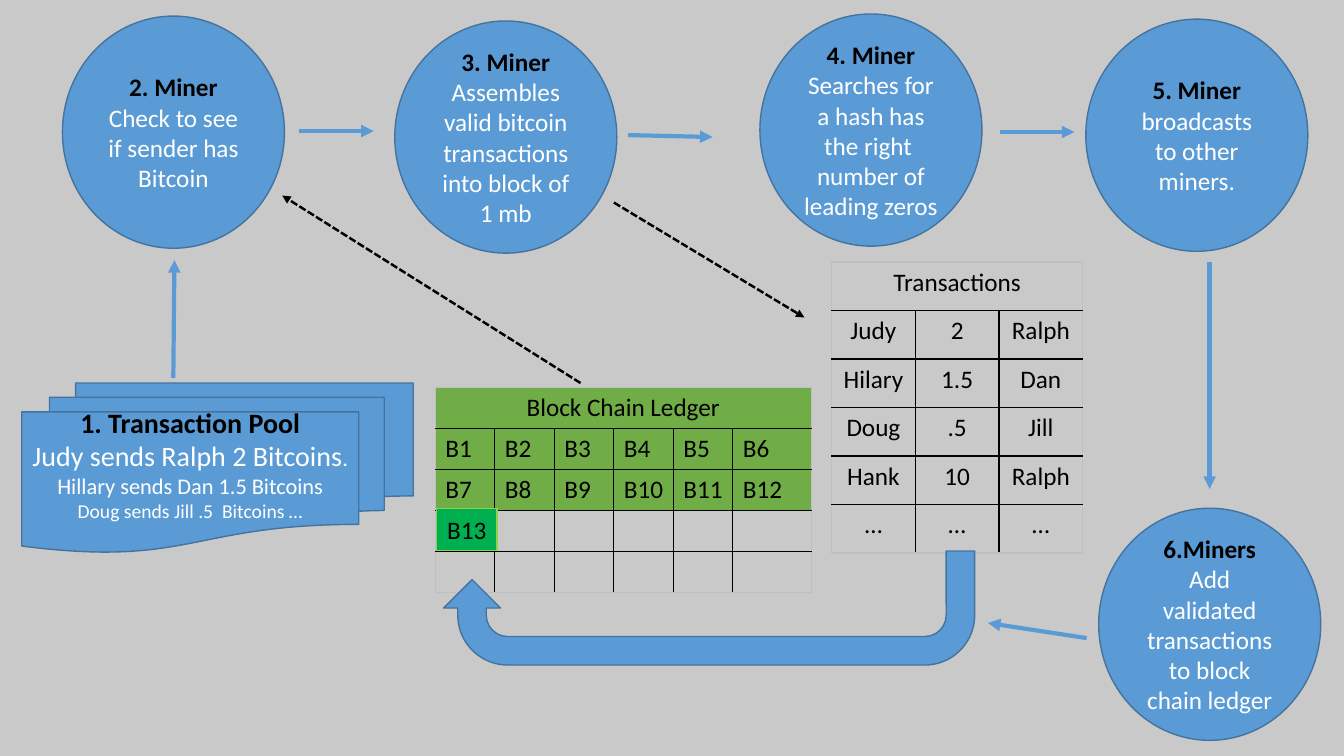
from lxml import etree
from pptx import Presentation
from pptx.dml.color import RGBColor
from pptx.enum import dml, shapes, text
from pptx.oxml import ns
from pptx.util import Pt

COLORS = {
    "background": "C9C9C9", "blue": "5B9BD5", "outline": "43739E",
    "ledger": "70AD47", "new_block": "00B050", "new_block_edge": "92D050",
    "black": "000000", "white": "FFFFFF", "table_edge": "BFBFBF",
}
FONT = "Calibri"


def add_run(paragraph, words, size=18, color="black", bold=False):
    run = paragraph.add_run()
    run.text = words
    run.font.name = FONT
    run.font.size = Pt(size)
    run.font.bold = bold
    run.font.color.rgb = RGBColor.from_string(COLORS[color])


def add_block(kind, left, top, width, height, fill="blue", edge="outline", lines=()):
    """Add a filled shape; each line is a list of runs (words, size, color, bold)."""
    shape = slide.shapes.add_shape(kind, Pt(left), Pt(top), Pt(width), Pt(height))
    shape.shadow.inherit = False
    shape.fill.solid()
    shape.fill.fore_color.rgb = RGBColor.from_string(COLORS[fill])
    shape.line.color.rgb = RGBColor.from_string(COLORS[edge])
    shape.line.width = Pt(1)
    frame = shape.text_frame
    frame.word_wrap = True
    frame.vertical_anchor = text.MSO_ANCHOR.MIDDLE
    for index, runs in enumerate(lines):
        paragraph = frame.add_paragraph() if index else frame.paragraphs[0]
        paragraph.alignment = text.PP_ALIGN.CENTER
        for run in runs:
            add_run(paragraph, *run)
    return shape


presentation = Presentation()
presentation.slide_width, presentation.slide_height = Pt(960), Pt(540)
slide = presentation.slides.add_slide(presentation.slide_layouts[6])
slide.background.fill.solid()
slide.background.fill.fore_color.rgb = RGBColor.from_string(COLORS["background"])

# Transaction pool
pool = add_block(
    shapes.MSO_SHAPE.FLOWCHART_MULTIDOCUMENT, 15.6, 273.6, 279.6, 121,
    lines=[
        [("1. Transaction Pool", 20, "black", True)],
        [("Judy sends Ralph 2 Bitcoins", 20, "white"), (".", 16, "white")],
        [("Hillary sends Dan 1.5 Bitcoins", 16, "white")],
        [("Doug sends Jill .5  Bitcoins …", 14, "white")],
    ])
pool.text_frame.margin_bottom = Pt(25)

# Miner steps
steps = [
    (44.6, 11.5, "2. Miner", "Check to see if sender has Bitcoin"),
    (282, 15, "3. Miner", "Assembles valid bitcoin transactions into block of 1 mb"),
    (542.8, 10, "4. Miner",
     "Searches for a hash has the right  number of leading zeros"),
    (775.6, 13.7, "5. Miner", "broadcasts to other miners."),
    (784.8, 363, "6.Miners", "Add validated transactions to block chain ledger"),
]
for left, top, title, action in steps:
    add_block(shapes.MSO_SHAPE.OVAL, left, top, 158.6, 165.8,
              lines=[[(title, 18, "black", True)], [(action, 18, "white")]])

# Tables: left, top, column widths, row height, alignment, filled rows, rows
tables = [
    (594, 187.2, [59.8] * 3, 34.65, text.PP_ALIGN.CENTER, 0, [
        ["Transactions", "", ""],
        ["Judy", "2", "Ralph"],
        ["Hilary", "1.5", "Dan"],
        ["Doug", ".5", "Jill"],
        ["Hank", "10", "Ralph"],
        ["…", "…", "…"],
    ]),
    (311, 277, [42.5] * 5 + [56], 29.3, text.PP_ALIGN.LEFT, 3, [
        ["Block Chain Ledger"] + [""] * 5,
        [f"B{number}" for number in range(1, 7)],
        [f"B{number}" for number in range(7, 13)],
        [""] * 6,
        [""] * 6,
    ]),
]
for left, top, widths, row_height, alignment, filled_rows, rows in tables:
    last_row, last_column = len(rows) - 1, len(widths) - 1
    table = slide.shapes.add_table(
        len(rows), len(widths), Pt(left), Pt(top),
        Pt(sum(widths)), Pt(row_height * len(rows))).table
    table.first_row = table.horz_banding = False
    for column, width in zip(table.columns, widths):
        column.width = Pt(width)
    table.cell(0, 0).merge(table.cell(0, last_column))
    for r, row in enumerate(rows):
        table.rows[r].height = Pt(row_height)
        for c, words in enumerate(row):
            cell = table.cell(r, c)
            paragraph = cell.text_frame.paragraphs[0]
            paragraph.alignment = text.PP_ALIGN.CENTER if r == 0 else alignment
            if words:
                add_run(paragraph, words)
            # Black inner rules, pale outer edge
            properties = cell._tc.get_or_add_tcPr()
            sides = {"lnL": c == 0, "lnR": r == 0 or c == last_column,
                     "lnT": r == 0, "lnB": r == last_row}
            for side, outer in sides.items():
                rule = etree.SubElement(properties, ns.qn(f"a:{side}"), w=str(Pt(1)))
                solid = etree.SubElement(rule, ns.qn("a:solidFill"))
                etree.SubElement(solid, ns.qn("a:srgbClr"),
                                 val=COLORS["table_edge" if outer else "black"])
            if r < filled_rows:
                cell.fill.solid()
                cell.fill.fore_color.rgb = RGBColor.from_string(COLORS["ledger"])
            else:
                cell.fill.background()

# Arrows: start x, start y, end x, end y, dashed
arrows = [
    (213.8, 93.6, 267, 93.6, False),
    (414.7, 273.6, 201.6, 139.7, True),
    (123.8, 270, 124.6, 185.8, False),
    (714.2, 94.3, 767.5, 94.3, False),
    (438.5, 144.7, 574.6, 226.8, True),
    (448.6, 96.5, 509, 97.9, False),
    (864, 187.2, 864, 349.2, False),
    (776.2, 455.8, 705.6, 445, False),
]
for start_x, start_y, end_x, end_y, dashed in arrows:
    arrow = slide.shapes.add_connector(
        shapes.MSO_CONNECTOR.STRAIGHT, Pt(start_x), Pt(start_y), Pt(end_x), Pt(end_y))
    arrow.line.color.rgb = RGBColor.from_string(COLORS["black" if dashed else "blue"])
    arrow.line.width = Pt(1.75 if dashed else 3)
    if dashed:
        arrow.line.dash_style = dml.MSO_LINE.SQUARE_DOT
    etree.SubElement(arrow.line._get_or_add_ln(), ns.qn("a:tailEnd"), type="triangle")
    etree.SubElement(arrow._element.spPr, ns.qn("a:effectLst"))

# New block and its way into the ledger
new_block = add_block(shapes.MSO_SHAPE.RECTANGLE, 311.8, 363, 43.2, 30.2,
                      "new_block", "new_block_edge", [[("B13",)]])
ledger_arrow = add_block(shapes.MSO_SHAPE.U_TURN_ARROW, 316.8, 393.6, 379.4, 81.4)
ledger_arrow.rotation = 180

presentation.save("out.pptx")
